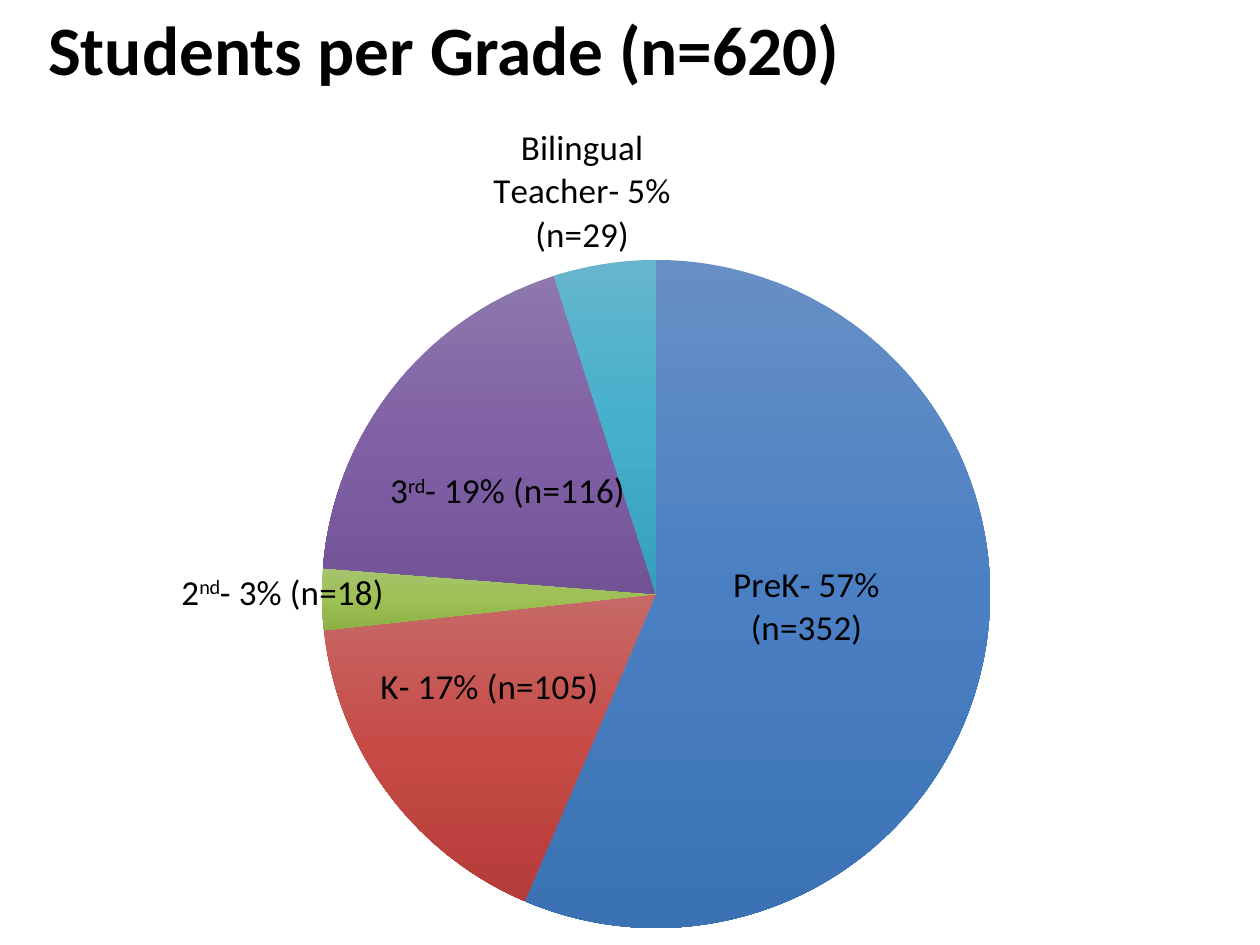
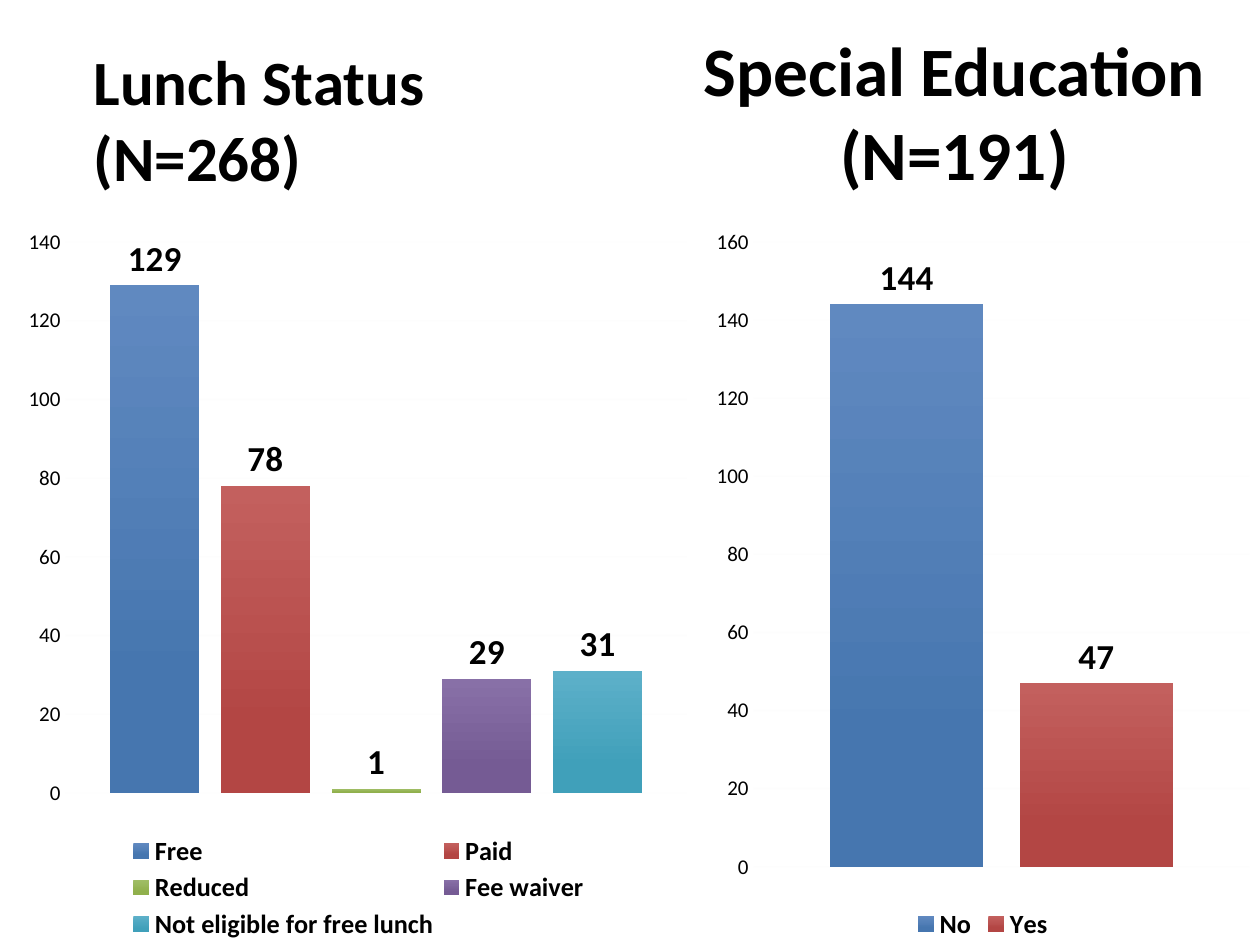
from typing import NamedTuple

import pptx
import pptx.chart.data
import pptx.dml.color
import pptx.enum.chart
import pptx.enum.text
import pptx.oxml
import pptx.oxml.ns
import pptx.util

Pt = pptx.util.Pt
XL = pptx.enum.chart
FONT = "Calibri"
NS = pptx.oxml.ns.nsdecls("a", "c")

COLORS = {"ink": "000000", "grid": "F2F2F2"}

# Gradient stops, top to bottom
PIE_STOPS = (0, 50, 100)
PIE_FILLS = {
    "blue": ("688FC5", "4A80C3", "3B72B3"),
    "red": ("C76967", "C64B47", "B63C39"),
    "green": ("A6C36F", "9DC054", "8DB045"),
    "purple": ("8E78AC", "8061A5", "715396"),
    "teal": ("66B5CD", "45B0CC", "36A0BC"),
}
BAR_STOPS = (0, 78)
BAR_FILLS = {
    "blue": ("6089C0", "4676AF"),
    "red": ("C3605E", "B34644"),
    "green": ("A1BE67", "90B04C"),
    "purple": ("8870A7", "755B94"),
    "teal": ("5DB0C9", "40A0BA"),
}


class Box(NamedTuple):
    """Place in points, on the slide or inside a chart."""
    left: float
    top: float
    width: float
    height: float


class Title(NamedTuple):
    text: str
    box: Box
    size: float = 39.6
    centred: bool = True


class Slice(NamedTuple):
    """One grade: label lines, each a list of runs, and the label's shift."""
    lines: list[list[str]]
    value: int
    fill: str
    shift: tuple[float, float]


class Bars(NamedTuple):
    box: Box
    plot: Box
    top: int
    values: dict[str, int]
    legend: Box | None = None


ORDERS = ("nd", "rd")
GRADES = [
    Slice([["PreK- 57%"], ["(n=352)"]], 57, "blue", (-7.5, -12)),
    Slice([["K- 17% (n=105)"]], 17, "red", (-18.5, -3.6)),
    Slice([["2", "nd", "- 3% (n=18)"]], 3, "green", (-118, -2.3)),
    Slice([["3", "rd", "- 19% (n=116)"]], 19, "purple", (-10, 0.5)),
    Slice([["Bilingual"], ["Teacher- 5%"], ["(n=29)"]], 5, "teal",
          (-27.4, -135.8)),
]
LUNCH = Bars(
    Box(8, 122.4, 393, 417.6), Box(29.4, 15.9, 355.2, 314.9), 140,
    {"Free": 129, "Paid": 78, "Reduced": 1, "Fee waiver": 29,
     "Not eligible for free lunch": 31},
    Box(62.4, 352, 269, 66))
SPECIAL = Bars(
    Box(403.2, 122.4, 316.8, 417.6), Box(27.4, 15.9, 283.4, 357.1), 160,
    {"No": 144, "Yes": 47})


def style(font, size: float, bold: bool = False) -> None:
    font.name, font.size, font.bold = FONT, Pt(size), bold
    font.color.rgb = pptx.dml.color.RGBColor.from_string(COLORS["ink"])


def shade(form, stops: tuple, hues: tuple) -> None:
    """Fill a chart part with a vertical gradient."""
    marks = "".join(
        f'<a:gs pos="{stop * 1000}"><a:srgbClr val="{hue}"/></a:gs>'
        for stop, hue in zip(stops, hues))
    form._element.get_or_add_spPr().append(pptx.oxml.parse_xml(
        f'<a:gradFill {NS} rotWithShape="1"><a:gsLst>{marks}</a:gsLst>'
        '<a:lin ang="5400000" scaled="0"/></a:gradFill>'))


def layout(body: str):
    return pptx.oxml.parse_xml(
        f'<c:layout {NS}><c:manualLayout>{body}</c:manualLayout></c:layout>')


def frame(part: Box, whole: Box, inner: bool):
    """Fix the area of a plot or legend inside its chart."""
    target = '<c:layoutTarget val="inner"/>' if inner else ""
    spans = (whole.width, whole.height) * 2
    sizes = "".join(f'<c:{key} val="{val / span:.4f}"/>'
                    for key, val, span in zip("xywh", part, spans))
    return layout(
        f'{target}<c:xMode val="edge"/><c:yMode val="edge"/>{sizes}')


def place(chart, plot: Box, whole: Box) -> None:
    area = chart._chartSpace.chart.plotArea
    for old in area.xpath("c:layout"):
        area.remove(old)
    area.insert(0, frame(plot, whole, True))


def add_title(slide, title: Title) -> None:
    shape = slide.shapes.add_textbox(*map(Pt, title.box))
    text = shape.text_frame
    text.word_wrap = True
    text.text = title.text
    para = text.paragraphs[0]
    if title.centred:
        text.vertical_anchor = pptx.enum.text.MSO_ANCHOR.MIDDLE
        para.alignment = pptx.enum.text.PP_ALIGN.CENTER
    style(para.runs[0].font, title.size, True)


def add_chart(slide, kind, box: Box, data):
    chart = slide.shapes.add_chart(kind, *map(Pt, box), data).chart
    chart.has_title = False
    chart.has_legend = False
    style(chart.font, 10)
    return chart


def add_label(label, lines: list[list[str]]) -> None:
    text = label.text_frame
    for num, line in enumerate(lines):
        para = text.add_paragraph() if num else text.paragraphs[0]
        for piece in line:
            run = para.add_run()
            run.text = piece
            style(run.font, 20)
            if piece in ORDERS:
                run.font._element.set("baseline", "30000")
    label.position = XL.XL_LABEL_POSITION.CENTER


def add_pie(slide, box: Box, plot: Box, slices: list[Slice]) -> None:
    data = pptx.chart.data.CategoryChartData()
    data.categories = [str(num + 1) for num in range(len(slices))]
    data.add_series("Series 1", [part.value for part in slices])
    chart = add_chart(slide, XL.XL_CHART_TYPE.PIE, box, data)
    place(chart, plot, box)
    chart.plots[0].vary_by_categories = True
    series = chart.plots[0].series[0]
    for num, part in enumerate(slices):
        point = series.points[num]
        shade(point.format, PIE_STOPS, PIE_FILLS[part.fill])
        add_label(point.data_label, part.lines)
    # Shift each label from the middle of its slice, without leader lines
    root = chart._chartSpace
    for part, mark in zip(slices, root.xpath(".//c:dLbl")):
        across, down = part.shift
        mark.insert(1, layout(f'<c:x val="{across / box.width:.4f}"/>'
                              f'<c:y val="{down / box.height:.4f}"/>'))
    for lead in root.xpath(".//c:showLeaderLines"):
        lead.set("val", "0")


def add_bars(slide, bars: Bars) -> None:
    data = pptx.chart.data.CategoryChartData()
    data.categories = ["1"]
    for name, value in bars.values.items():
        data.add_series(name, [value])
    chart = add_chart(
        slide, XL.XL_CHART_TYPE.COLUMN_CLUSTERED, bars.box, data)
    place(chart, bars.plot, bars.box)
    plot = chart.plots[0]
    plot.vary_by_categories = False
    plot.gap_width, plot.overlap = 100, -24
    for series, hues in zip(plot.series, BAR_FILLS.values()):
        shade(series.format, BAR_STOPS, hues)
        labels = series.data_labels
        labels.show_value = True
        labels.position = XL.XL_LABEL_POSITION.OUTSIDE_END
        style(labels.font, 20, True)

    # Axes and faint grid
    chart.category_axis.visible = False
    axis = chart.value_axis
    axis.minimum_scale, axis.maximum_scale, axis.major_unit = 0, bars.top, 20
    axis.major_tick_mark = XL.XL_TICK_MARK.NONE
    axis.format.line.fill.background()
    style(axis.tick_labels.font, 12)
    line = axis.major_gridlines.format.line
    line.width = Pt(0.75)
    line.color.rgb = pptx.dml.color.RGBColor.from_string(COLORS["grid"])
    for hue in axis._element.xpath("c:majorGridlines//a:srgbClr"):
        hue.append(pptx.oxml.parse_xml(f'<a:alpha {NS} val="10000"/>'))

    # Legend
    chart.has_legend = True
    legend = chart.legend
    legend.position = XL.XL_LEGEND_POSITION.BOTTOM
    legend.include_in_layout = False
    style(legend.font, 15, True)
    if bars.legend:
        for old in legend._element.xpath("c:layout"):
            legend._element.remove(old)
        legend._element.xpath("c:legendPos")[0].addnext(
            frame(bars.legend, bars.box, False))


def main() -> None:
    deck = pptx.Presentation()
    deck.slide_width, deck.slide_height = Pt(720), Pt(540)
    blank = deck.slide_layouts[6]

    # Students per grade
    slide = deck.slides.add_slide(blank)
    add_title(slide, Title(
        "Students per Grade (n=620)", Box(0, -24.5, 507.6, 103.7)))
    add_pie(slide, Box(0, 61.2, 720, 478.8),
            Box(184, 87.4, 381.8, 381.8), GRADES)

    # Lunch status and special education
    slide = deck.slides.add_slide(blank)
    add_title(slide, Title(
        "Special Education (N=191)", Box(391, 12.2, 308.9, 102.2)))
    add_bars(slide, LUNCH)
    add_title(slide, Title(
        "Lunch Status (N=268)", Box(46.4, 20.9, 229.7, 93.6), 36, False))
    add_bars(slide, SPECIAL)

    deck.save("out.pptx")


if __name__ == "__main__":
    main()
